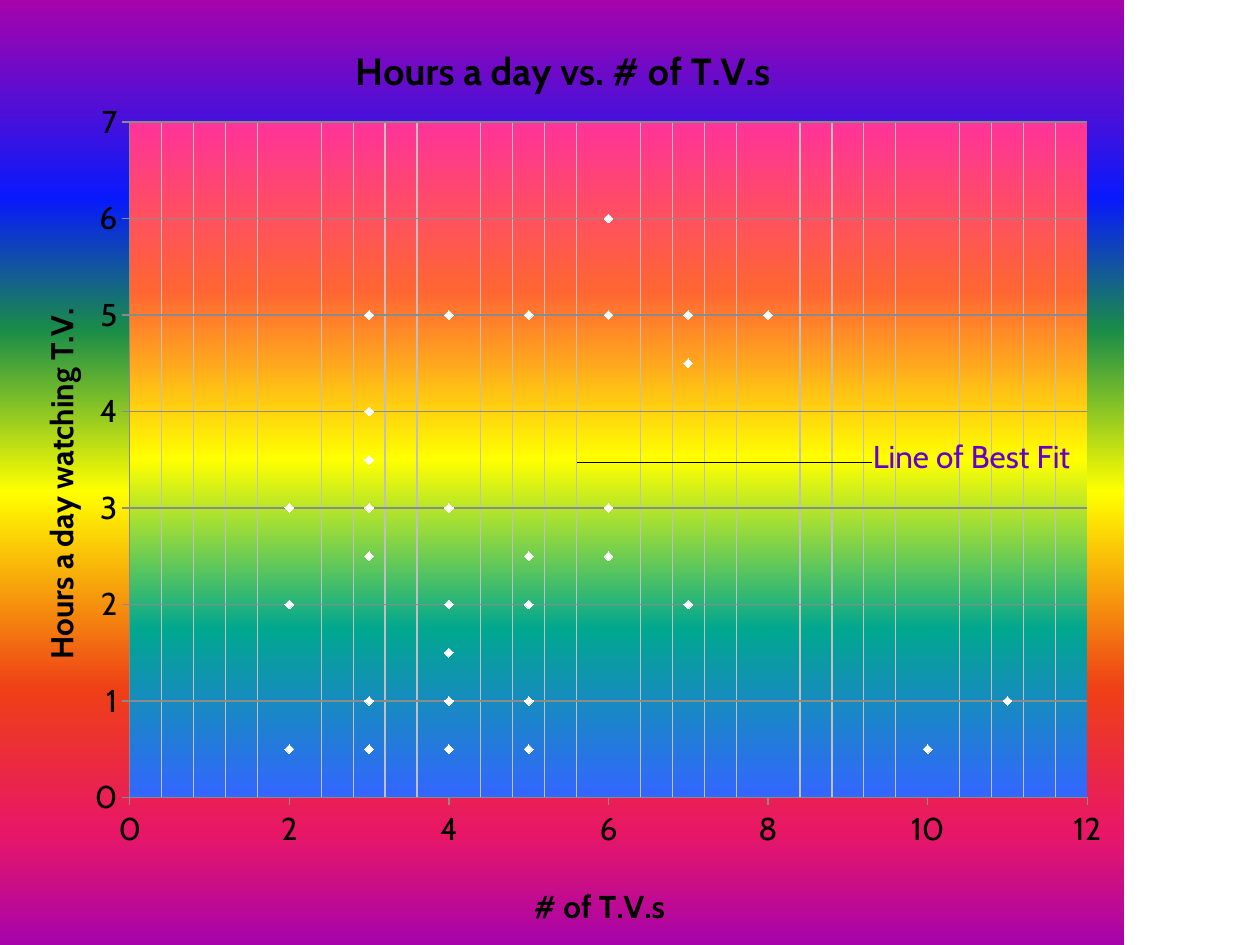
import dataclasses

import lxml.etree
import pptx
import pptx.chart.data
import pptx.dml.color
import pptx.enum.chart
import pptx.enum.shapes
import pptx.enum.text
import pptx.oxml
import pptx.oxml.ns
import pptx.util
from pptx.util import Inches

SURVEY = [
    (4, 0.5), (2, 3), (4, 5), (5, 2), (2, 2), (3, 5), (6, 3), (4, 1),
    (4, 2), (6, 2.5), (5, 2.5), (7, 5), (3, 5), (2, 3), (3, 4), (4, 1.5),
    (6, 5), (3, 5), (3, 3), (4, 1), (8, 5), (10, 0.5), (4, 1.5), (3, 0.5),
    (5, 2.5), (3, 3.5), (2, 0.5), (5, 5), (3, 2.5), (5, 1), (4, 2), (4, 3),
    (4, 0.5), (11, 1), (6, 6), (7, 2), (7, 4.5), (3, 4), (5, 0.5), (3, 1),
]


@dataclasses.dataclass(frozen=True)
class Theme:
    font: str = "Cabin"
    body_size: float = 18
    title_size: float = 21.6
    text: str = "000000"
    label: str = "6600CC"
    marker: str = "FFFFFF"
    axis: str = "8B8B8B"
    minor_grid: str = "C0C0C0"
    chart_gradient: tuple = (
        (0, "A603AB"), (21, "0819FB"), (35, "1A8D48"), (52, "FFFF00"),
        (73, "EE3F17"), (88, "E81766"), (100, "A603AB"),
    )
    plot_gradient: tuple = (
        (0, "FF3399"), (25, "FF6633"), (50, "FFFF00"), (75, "01A78F"), (100, "3366FF"),
    )


def rgb(color):
    return pptx.dml.color.RGBColor.from_string(color)


def shape_properties(content):
    namespaces = pptx.oxml.ns.nsdecls("c", "a")
    return pptx.oxml.parse_xml(f"<c:spPr {namespaces}>{content}</c:spPr>")


def gradient_properties(stops):
    entries = "".join(
        f'<a:gs pos="{position * 1000}"><a:srgbClr val="{color}"/></a:gs>'
        for position, color in stops
    )
    return shape_properties(
        f'<a:gradFill rotWithShape="0"><a:gsLst>{entries}</a:gsLst>'
        '<a:lin ang="5400000" scaled="1"/></a:gradFill><a:ln><a:noFill/></a:ln>'
    )


def place(element, index, inner=False, **fractions):
    for layout in element.findall(pptx.oxml.ns.qn("c:layout")):
        element.remove(layout)
    modes = "".join(f'<c:{key}Mode val="edge"/>' for key in ("x", "y"))
    values = "".join(f'<c:{key} val="{value}"/>' for key, value in fractions.items())
    target = '<c:layoutTarget val="inner"/>' if inner else ""
    element.insert(index, pptx.oxml.parse_xml(
        f'<c:layout {pptx.oxml.ns.nsdecls("c")}><c:manualLayout>'
        f"{target}{modes}{values}</c:manualLayout></c:layout>"
    ))


class SlideBuilder:
    """Adds styled elements to the current slide."""

    def __init__(self, slide, theme):
        self.slide = slide
        self.theme = theme

    def style_font(self, font, size, color, bold=False):
        font.name = self.theme.font
        font.size = pptx.util.Pt(size)
        font.bold = bold
        font.color.rgb = rgb(color)

    def style_line(self, line, color, width=0.75):
        line.color.rgb = rgb(color)
        line.width = pptx.util.Pt(width)

    def title(self, title, text, size, x, y):
        title.text_frame.text = text
        for run in title.text_frame.paragraphs[0].runs:
            self.style_font(run.font, size, self.theme.text, bold=True)
        place(title._element, 1, x=x, y=y)

    def axis(self, axis, maximum, unit):
        axis.minimum_scale = 0
        axis.maximum_scale = maximum
        axis.major_unit = unit
        axis.major_tick_mark = pptx.enum.chart.XL_TICK_MARK.OUTSIDE
        axis.minor_tick_mark = pptx.enum.chart.XL_TICK_MARK.NONE
        axis.tick_labels.number_format = "General"
        axis.tick_labels.number_format_is_linked = False
        self.style_font(axis.tick_labels.font, self.theme.body_size, self.theme.text)
        self.style_line(axis.format.line, self.theme.axis)

    def minor_gridlines(self, axis, unit):
        axis.minor_unit = unit
        axis.has_minor_gridlines = True
        gridlines = axis._element.find(pptx.oxml.ns.qn("c:minorGridlines"))
        gridlines.append(shape_properties(
            f'<a:ln w="{pptx.util.Pt(0.75)}"><a:solidFill>'
            f'<a:srgbClr val="{self.theme.minor_grid}"/></a:solidFill></a:ln>'
        ))

    def scatter(self, points, left, top, width, height):
        data = pptx.chart.data.XyChartData()
        series_data = data.add_series("Series 1")
        for x, y in points:
            series_data.add_data_point(x, y)
        chart = self.slide.shapes.add_chart(
            pptx.enum.chart.XL_CHART_TYPE.XY_SCATTER,
            Inches(left), Inches(top), Inches(width), Inches(height), data,
        ).chart
        chart.has_legend = False
        self.style_font(chart.font, self.theme.body_size, self.theme.text)
        chart.plots[0].vary_by_categories = False

        series = chart.plots[0].series[0]
        series.smooth = False
        series.format.line.fill.background()
        series.marker.style = pptx.enum.chart.XL_MARKER_STYLE.DIAMOND
        series.marker.size = 5
        series.marker.format.fill.solid()
        series.marker.format.fill.fore_color.rgb = rgb(self.theme.marker)
        self.style_line(series.marker.format.line, self.theme.marker)

        horizontal, vertical = chart.category_axis, chart.value_axis
        self.axis(horizontal, 12, 2)
        self.axis(vertical, 7, 1)
        horizontal.has_major_gridlines = False
        self.minor_gridlines(horizontal, 0.4)
        vertical.has_major_gridlines = True
        self.style_line(vertical.major_gridlines.format.line, self.theme.axis)

        size = self.theme.body_size
        self.title(chart.chart_title, "Hours a day vs. # of T.V.s", self.theme.title_size, 0.31, 0.04)
        self.title(horizontal.axis_title, "# of T.V.s", size, 0.47, 0.93)
        self.title(vertical.axis_title, "Hours a day watching T.V.", size, 0.03, 0.32)

        chart_element = chart._chartSpace.chart
        plot_area = chart_element.plotArea
        place(plot_area, 0, inner=True, x=1.03 / width, y=0.97 / height,
              w=7.6 / width, h=5.36 / height)
        plot_area.append(gradient_properties(self.theme.plot_gradient))
        chart_element.addnext(gradient_properties(self.theme.chart_gradient))

    def group(self):
        return self.slide.shapes.add_group_shape()

    def line(self, group, start_x, start_y, end_x, end_y):
        connector = group.shapes.add_connector(
            pptx.enum.shapes.MSO_CONNECTOR.STRAIGHT,
            Inches(start_x), Inches(start_y), Inches(end_x), Inches(end_y),
        )
        self.style_line(connector.line, self.theme.text, 0.9)
        lxml.etree.SubElement(connector._element.spPr, pptx.oxml.ns.qn("a:effectLst"))

    def label(self, group, text, left, top, width, height):
        text_frame = group.shapes.add_textbox(
            Inches(left), Inches(top), Inches(width), Inches(height)
        ).text_frame
        text_frame.word_wrap = True
        text_frame.auto_size = pptx.enum.text.MSO_AUTO_SIZE.SHAPE_TO_FIT_TEXT
        text_frame.text = text
        for run in text_frame.paragraphs[0].runs:
            self.style_font(run.font, self.theme.body_size, self.theme.label)


def main():
    presentation = pptx.Presentation()
    presentation.slide_width = Inches(10)
    presentation.slide_height = Inches(7.5)
    slide = presentation.slides.add_slide(presentation.slide_layouts[6])
    builder = SlideBuilder(slide, Theme())
    builder.scatter(SURVEY, 0, 0, 8.92, 7.5)
    best_fit = builder.group()
    builder.line(best_fit, 4.58, 3.67, 6.92, 3.67)
    builder.label(best_fit, "Line of Best Fit", 6.83, 3.42, 2.67, 0.4)
    presentation.save("out.pptx")


if __name__ == "__main__":
    main()
